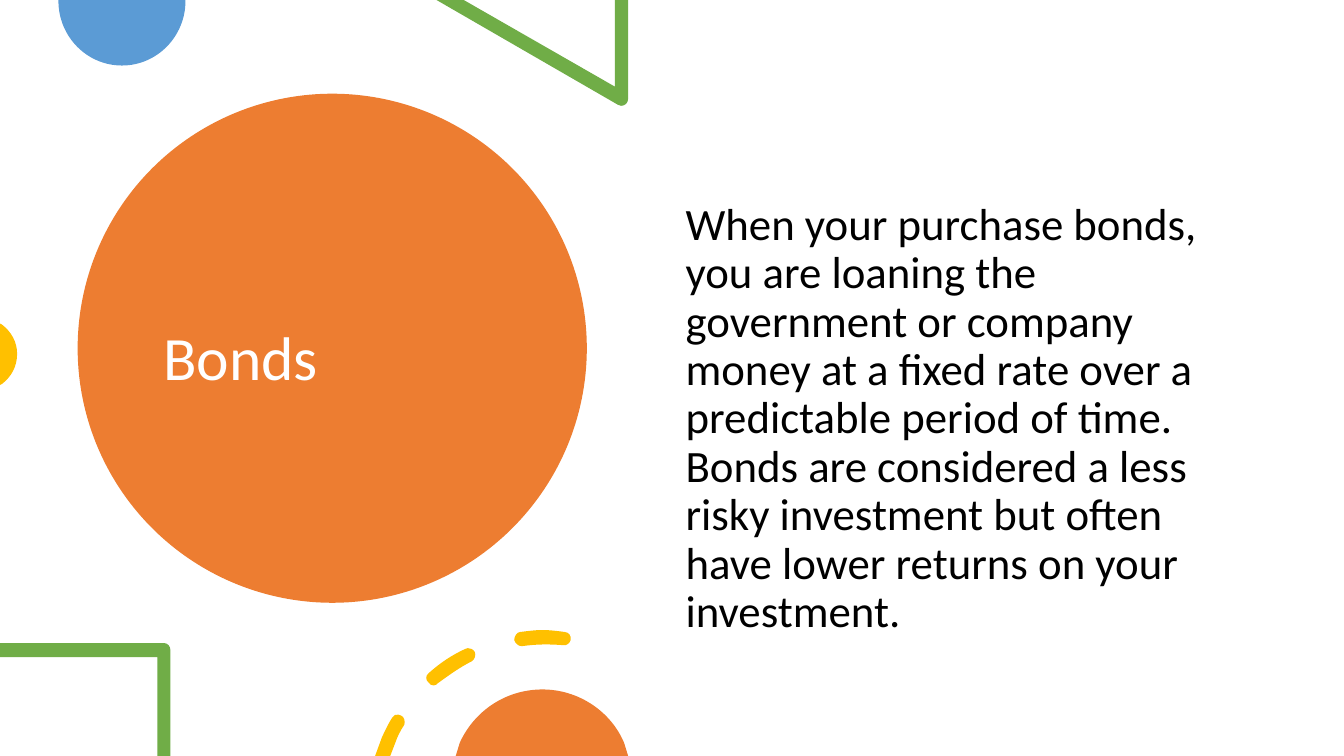
from lxml import etree
from pptx import Presentation, util as u
from pptx.dml.color import RGBColor
from pptx.enum import shapes, text
from pptx.oxml.ns import qn

COLORS = {
    "orange": "ED7D31", "blue": "5B9BD5", "green": "70AD47",
    "gold": "FFC000", "white": "FFFFFF", "black": "000000",
}
FONT = "Calibri"


def vertices(points):
    """Split corners (x, y) and curves (x1, y1, x2, y2, x, y) into pairs."""
    return [(u.Inches(pt[i]), u.Inches(pt[i + 1]))
            for pt in points for i in range(0, len(pt), 2)]


def bend(sp, contours):
    """Join the three segments that stand for each curve into one cubic."""
    segments = iter(list(sp.element.iter(qn("a:lnTo"))))
    for contour in contours:
        for pt in contour[1:]:
            seg = next(segments)
            if len(pt) == 6:
                seg.tag = qn("a:cubicBezTo")
                for _ in range(2):
                    extra = next(segments)
                    seg.append(extra[0])
                    extra.getparent().remove(extra)


class SlideBuilder:
    def __init__(self, prs):
        self.s = prs.slides.add_slide(prs.slide_layouts[1])
        bg = self.s.background.fill
        bg.solid()
        bg.fore_color.rgb = self.color("white")

    def color(self, name):
        return RGBColor.from_string(COLORS[name])

    def paint(self, sp, fill):
        sp.shadow.inherit = False
        sp.fill.solid()
        sp.fill.fore_color.rgb = self.color(fill)
        sp.line.fill.background()

    def ellipse(self, fill, *box):
        sp = self.s.shapes.add_shape(shapes.MSO_SHAPE.OVAL, *map(u.Inches, box))
        self.paint(sp, fill)

    def outline(self, fill, *contours):
        builder = None
        for contour in contours:
            start, *rest = vertices(contour)
            if builder is None:
                builder = self.s.shapes.build_freeform(*start, scale=1.0)
            else:
                builder.move_to(*start)
            builder.add_line_segments(rest, close=True)
        sp = builder.convert_to_shape()
        # Every contour ends where it starts or closes with a straight line
        bend(sp, contours)
        self.paint(sp, fill)

    def placeholder(self, idx, box, words, size, color, anchor, before=0):
        sp = self.s.placeholders[idx]
        sp.left, sp.top, sp.width, sp.height = map(u.Inches, box)
        # Bring the placeholder in front of the shapes drawn so far
        sp.element.getparent().append(sp.element)
        tf = sp.text_frame
        tf.word_wrap = True
        tf.auto_size = text.MSO_AUTO_SIZE.NONE
        tf.vertical_anchor = anchor
        p = tf.paragraphs[0]
        p.alignment = text.PP_ALIGN.LEFT
        p.line_spacing = 0.9
        p.space_before = u.Pt(before)
        # No bullet and no hanging indent
        pPr = p._p.get_or_add_pPr()
        pPr.set("marL", "0")
        pPr.set("indent", "0")
        etree.SubElement(pPr, qn("a:buNone"))
        r = p.add_run()
        r.text = words
        r.font.name = FONT
        r.font.size = u.Pt(size)
        r.font.color.rgb = self.color(color)


def main():
    prs = Presentation()
    prs.slide_width, prs.slide_height = u.Inches(13.33), u.Inches(7.5)
    b = SlideBuilder(prs)

    # Title in the large circle
    b.ellipse("orange", 0.77, 0.93, 5.05, 5.05)
    b.placeholder(0, (1.52, 1.35, 3.54, 4.45), "Bonds", 44, "white",
                  text.MSO_ANCHOR.MIDDLE)

    # Blue disc and green triangle on the top edge
    b.outline("blue", [(1.84, 0), (0.58, 0), (0.58, 0.01),
                       (0.58, 0.36, 0.86, 0.65, 1.21, 0.65),
                       (1.56, 0.65, 1.84, 0.36, 1.84, 0.01)])
    b.outline("green", [(6.23, 0), (6.1, 0), (6.1, 0.86), (4.6, 0), (4.33, 0),
                        (6.13, 1.04), (6.14, 1.05, 6.15, 1.05, 6.16, 1.05),
                        (6.2, 1.05, 6.23, 1.02, 6.23, 0.98)])

    # Gold disc on the left edge
    b.outline("gold", [(0, 3.21), (0, 3.82), (0.02, 3.81),
                       (0.11, 3.74, 0.17, 3.64, 0.17, 3.51),
                       (0.17, 3.39, 0.11, 3.29, 0.02, 3.22)])

    # Body text
    b.placeholder(1, (6.7, 1.95, 5.75, 4.03),
                  "When your purchase bonds, you are loaning the government or "
                  "company money at a fixed rate over a predictable period of "
                  "time. Bonds are considered a less risky investment but often "
                  "have lower returns on your investment.",
                  32, "black", text.MSO_ANCHOR.TOP, before=10)

    # Green frame in the bottom left corner
    b.outline("green", [(1.63, 6.38), (0, 6.38), (0, 6.52), (1.56, 6.52),
                        (1.56, 7.5), (1.69, 7.5), (1.69, 6.45),
                        (1.69, 6.41, 1.66, 6.38, 1.63, 6.38)])

    # Gold dashed arc around the lower orange disc
    low_dash = [(3.95, 7.09), (3.93, 7.08, 3.9, 7.1, 3.89, 7.12),
                (3.85, 7.18, 3.82, 7.25, 3.79, 7.31), (3.72, 7.5), (3.87, 7.5),
                (3.92, 7.37), (3.94, 7.31, 3.97, 7.25, 4.01, 7.19),
                (4.02, 7.16, 4.01, 7.11, 3.98, 7.1),
                (3.97, 7.09, 3.96, 7.09, 3.95, 7.09)]
    middle_dash = [(4.64, 6.43), (4.63, 6.43, 4.62, 6.43, 4.61, 6.44),
                   (4.48, 6.5, 4.36, 6.58, 4.25, 6.68),
                   (4.22, 6.7, 4.22, 6.75, 4.25, 6.77),
                   (4.26, 6.79, 4.28, 6.8, 4.3, 6.8), (4.3, 6.8),
                   (4.32, 6.8, 4.33, 6.79, 4.34, 6.78),
                   (4.45, 6.7, 4.56, 6.62, 4.68, 6.56),
                   (4.71, 6.54, 4.72, 6.5, 4.71, 6.47),
                   (4.69, 6.44, 4.67, 6.43, 4.64, 6.43)]
    top_dash = [(5.38, 6.25), (5.31, 6.25, 5.24, 6.26, 5.16, 6.27),
                (5.13, 6.27, 5.1, 6.31, 5.1, 6.35),
                (5.11, 6.38, 5.14, 6.41, 5.17, 6.41),
                (5.18, 6.41, 5.18, 6.41, 5.18, 6.41),
                (5.32, 6.39, 5.45, 6.39, 5.58, 6.4),
                (5.62, 6.41, 5.65, 6.38, 5.66, 6.35),
                (5.67, 6.31, 5.64, 6.27, 5.6, 6.27),
                (5.6, 6.27, 5.6, 6.27, 5.6, 6.27),
                (5.53, 6.26, 5.45, 6.25, 5.38, 6.25)]
    b.outline("gold", low_dash, middle_dash, top_dash)

    # Orange disc on the bottom edge
    b.outline("orange", [(5.38, 6.84), (5.01, 6.84, 4.7, 7.06, 4.56, 7.37),
                         (4.52, 7.5), (6.23, 7.5), (6.19, 7.37),
                         (6.06, 7.06, 5.74, 6.84, 5.38, 6.84)])

    prs.save("out.pptx")


if __name__ == "__main__":
    main()
